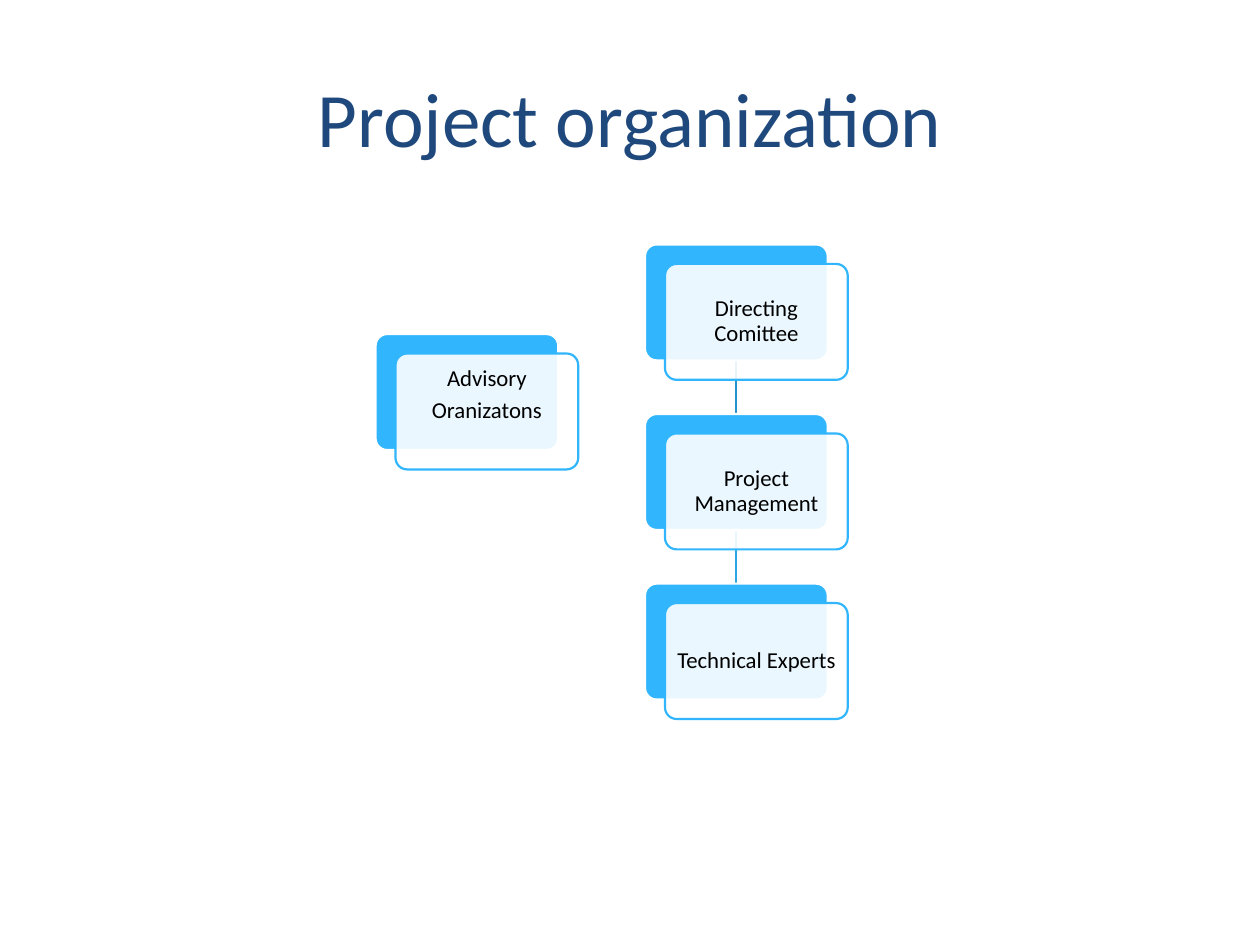
from dataclasses import dataclass

from lxml import etree
from pptx import Presentation
from pptx.dml.color import RGBColor
from pptx.enum import shapes as sh, text as tx
from pptx.oxml import ns
from pptx.util import Pt


@dataclass(frozen=True)
class Theme:
    font: str = "Calibri"
    navy: str = "1F497D"
    blue: str = "31B6FD"
    white: str = "FFFFFF"
    black: str = "000000"
    head: float = 44
    body: float = 13
    line: float = 1.25
    alpha: int = 90000


@dataclass(frozen=True)
class Card:
    words: tuple[str, ...]
    left: float
    top: float
    lift: float = 0


@dataclass(frozen=True)
class Link:
    top: float
    color: str


THEME = Theme()
WIDE, HIGH = 104.4, 66.24
DX, DY = 11.4, 11.1
EDGE, PAD = 2, 3.6
COL, ROW, STEP = 368.6, 139.7, 96.9

CARDS = [Card(("Advisory", "Oranizatons"), 214.6, 190.9, 18.8)] + [
    Card((name,), COL, ROW + i * STEP)
    for i, name in enumerate(
        ("Directing Comittee", "Project Management", "Technical Experts")
    )
]
LINKS = [
    Link(ROW + i * STEP + HIGH, color)
    for i, color in reversed(list(enumerate(("2792CB", "2CA5E6"))))
]


def rgb(color: str) -> RGBColor:
    return RGBColor.from_string(color)


def write(slide, words: tuple[str, ...], box: tuple, size: float, color: str,
          pad: float = PAD, lift: float = 0, lead: float = 1) -> None:
    frame = slide.shapes.add_textbox(*map(Pt, box)).text_frame
    frame.word_wrap = True
    frame.vertical_anchor = tx.MSO_ANCHOR.MIDDLE
    frame.margin_left = frame.margin_right = frame.margin_top = Pt(pad)
    frame.margin_bottom = Pt(pad + lift)
    frame.text = "\n".join(words)
    for para in frame.paragraphs:
        para.alignment = tx.PP_ALIGN.CENTER
        para.line_spacing = lead
        para.space_after = Pt(4.5 if len(words) > 1 else 0)
        for run in para.runs:
            run.font.name = THEME.font
            run.font.size = Pt(size)
            run.font.color.rgb = rgb(color)


def panel(slide, left: float, top: float, fill: str, line: str):
    box = slide.shapes.add_shape(
        sh.MSO_SHAPE.ROUNDED_RECTANGLE, Pt(left), Pt(top), Pt(WIDE), Pt(HIGH)
    )
    box.adjustments[0] = 0.1
    box.shadow.inherit = False
    box.fill.solid()
    box.fill.fore_color.rgb = rgb(fill)
    box.line.color.rgb = rgb(line)
    box.line.width = Pt(THEME.line)
    return box


def fade(box) -> None:
    tint = box.fill._xPr.find(".//" + ns.qn("a:srgbClr"))
    etree.SubElement(tint, ns.qn("a:alpha"), val=str(THEME.alpha))


def draw_card(slide, card: Card) -> None:
    panel(slide, card.left, card.top, THEME.blue, THEME.white)
    left, top = card.left + DX, card.top + DY
    fade(panel(slide, left, top, THEME.white, THEME.blue))
    box = (left + EDGE, top + EDGE, WIDE - 2 * EDGE, HIGH - 2 * EDGE)
    write(slide, card.words, box, THEME.body, THEME.black,
          lift=card.lift, lead=0.9)


def draw_link(slide, link: Link) -> None:
    mid = Pt(COL + WIDE / 2)
    line = slide.shapes.add_connector(
        sh.MSO_CONNECTOR.STRAIGHT, mid, Pt(link.top),
        mid, Pt(link.top + STEP - HIGH)
    )
    line.line.color.rgb = rgb(link.color)
    line.line.width = Pt(THEME.line)
    etree.SubElement(line._element.spPr, ns.qn("a:effectLst"))


def main() -> None:
    deck = Presentation()
    deck.slide_width, deck.slide_height = Pt(720), Pt(540)
    slide = deck.slides.add_slide(deck.slide_layouts[6])
    write(slide, ("Project organization",), (36, 21.6, 648, 90),
          THEME.head, THEME.navy)
    for link in LINKS:
        draw_link(slide, link)
    for card in CARDS:
        draw_card(slide, card)
    deck.save("out.pptx")


if __name__ == "__main__":
    main()
